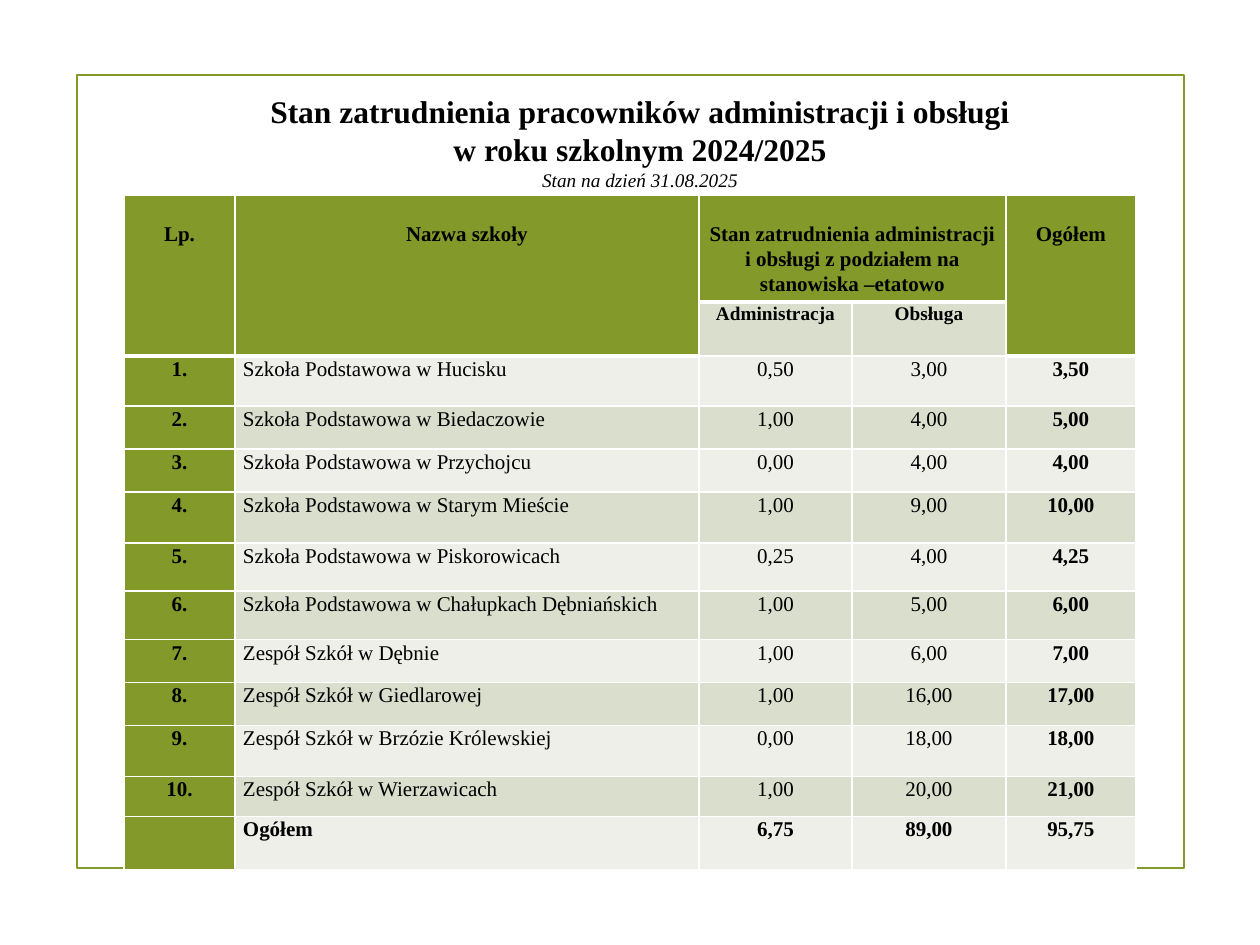
from lxml import etree
from pptx import Presentation
from pptx.dml.color import RGBColor
from pptx.enum.shapes import MSO_SHAPE
from pptx.enum.text import PP_ALIGN
from pptx.oxml.ns import qn
from pptx.util import Pt

MID, JUST = PP_ALIGN.CENTER, PP_ALIGN.JUSTIFY
RECT = MSO_SHAPE.RECTANGLE
PX = 914400 // 126
FONT = "Times New Roman"
HUES = {"green": "83992A", "dark": "D9DECD", "light": "EDEFE8",
        "ink": "000000", "white": "FFFFFF"}

TITLE = [
    ("Stan zatrudnienia pracowników administracji i obsługi", 18, True),
    ("w roku szkolnym 2024/2025", 18, True),
    ("Stan na dzień 31.08.2025", 11, False),
]
HEAD = ["Lp.", "Nazwa szkoły",
        "Stan zatrudnienia administracji i obsługi z podziałem na stanowiska –etatowo",
        "", "Ogółem"]
PARTS = ["", "", "Administracja", "Obsługa", ""]
SCHOOLS = [
    ("Szkoła Podstawowa w Hucisku", "0,50", "3,00", "3,50"),
    ("Szkoła Podstawowa w Biedaczowie", "1,00", "4,00", "5,00"),
    ("Szkoła Podstawowa w Przychojcu", "0,00", "4,00", "4,00"),
    ("Szkoła Podstawowa w Starym Mieście", "1,00", "9,00", "10,00"),
    ("Szkoła Podstawowa w Piskorowicach", "0,25", "4,00", "4,25"),
    ("Szkoła Podstawowa w Chałupkach Dębniańskich", "1,00", "5,00", "6,00"),
    ("Zespół Szkół w Dębnie", "1,00", "6,00", "7,00"),
    ("Zespół Szkół w Giedlarowej", "1,00", "16,00", "17,00"),
    ("Zespół Szkół w Brzózie Królewskiej", "0,00", "18,00", "18,00"),
    ("Zespół Szkół w Wierzawicach", "1,00", "20,00", "21,00"),
]
TOTAL = ["", "Ogółem", "6,75", "89,00", "95,75"]
COLS = [111, 464, 153, 154, 130]
ROWS = [107, 54, 50, 43, 43, 51, 48, 49, 43, 43, 51, 40, 53]
SPANS = [(0, 0, 1, 0), (0, 1, 1, 1), (0, 2, 0, 3), (0, 4, 1, 4)]


def box(*sides):
    return [side * PX for side in sides]


def hue(name):
    return RGBColor.from_string(HUES[name])


def write(par, text, size=12, bold=False, slant=False, align=MID, lead=None):
    par.alignment = align
    if lead:
        par.line_spacing = lead
    run = par.add_run()
    run.text = text
    font = run.font
    font.name, font.size = FONT, Pt(size)
    font.bold, font.italic = bold, slant
    font.color.rgb = hue("ink")


def edge(cell, side, width):
    line = etree.SubElement(cell._tc.get_or_add_tcPr(), qn("a:" + side), w=str(Pt(width)))
    fill = etree.SubElement(line, qn("a:solidFill"))
    etree.SubElement(fill, qn("a:srgbClr"), val=HUES["white"])


def style(cell, row, col):
    last = 0 if col in (2, 3) else 1
    edge(cell, "lnL", 1)
    edge(cell, "lnR", 1)
    edge(cell, "lnT", 3 if row == last + 1 else 1)
    edge(cell, "lnB", 3 if row <= last else 1)
    cell.fill.solid()
    green = col == 0 or row <= last
    cell.fill.fore_color.rgb = hue("green" if green else "dark" if row % 2 else "light")
    cell.margin_left = cell.margin_right = 8 * PX
    cell.margin_top = (26 if row == 0 else 0) * PX
    cell.margin_bottom = 0


def main():
    deck = Presentation()
    deck.slide_width, deck.slide_height = box(1260, 945)
    slide = deck.slides.add_slide(deck.slide_layouts[6])

    frame = slide.shapes.add_shape(RECT, *box(77, 75, 1107, 793))
    frame.shadow.inherit = False
    frame.fill.background()
    frame.line.color.rgb = hue("green")
    frame.line.width = Pt(1.25)

    body = slide.shapes.add_textbox(*box(144, 86, 992, 183)).text_frame
    body.word_wrap = True
    for i, (text, size, bold) in enumerate(TITLE):
        par = body.add_paragraph() if i else body.paragraphs[0]
        write(par, text, size=size, bold=bold, slant=not bold)

    data = [HEAD, PARTS]
    data += [(f"{i}.", *school) for i, school in enumerate(SCHOOLS, 1)]
    data.append(TOTAL)
    grid = slide.shapes.add_table(len(ROWS), len(COLS),
                                  *box(124, 195, sum(COLS), sum(ROWS))).table
    for col, width in zip(grid.columns, COLS):
        col.width = width * PX
    for row, height in zip(grid.rows, ROWS):
        row.height = height * PX
    for top, left, low, right in SPANS:
        grid.cell(top, left).merge(grid.cell(low, right))

    for r, texts in enumerate(data):
        for c, text in enumerate(texts):
            cell = grid.cell(r, c)
            style(cell, r, c)
            if text:
                write(cell.text_frame.paragraphs[0], text,
                      size=11 if r == 1 else 12,
                      bold=r < 2 or c in (0, 4) or r == len(data) - 1,
                      align=JUST if c == 1 and r > 1 else MID, lead=1.07)

    deck.save("out.pptx")


if __name__ == "__main__":
    main()
